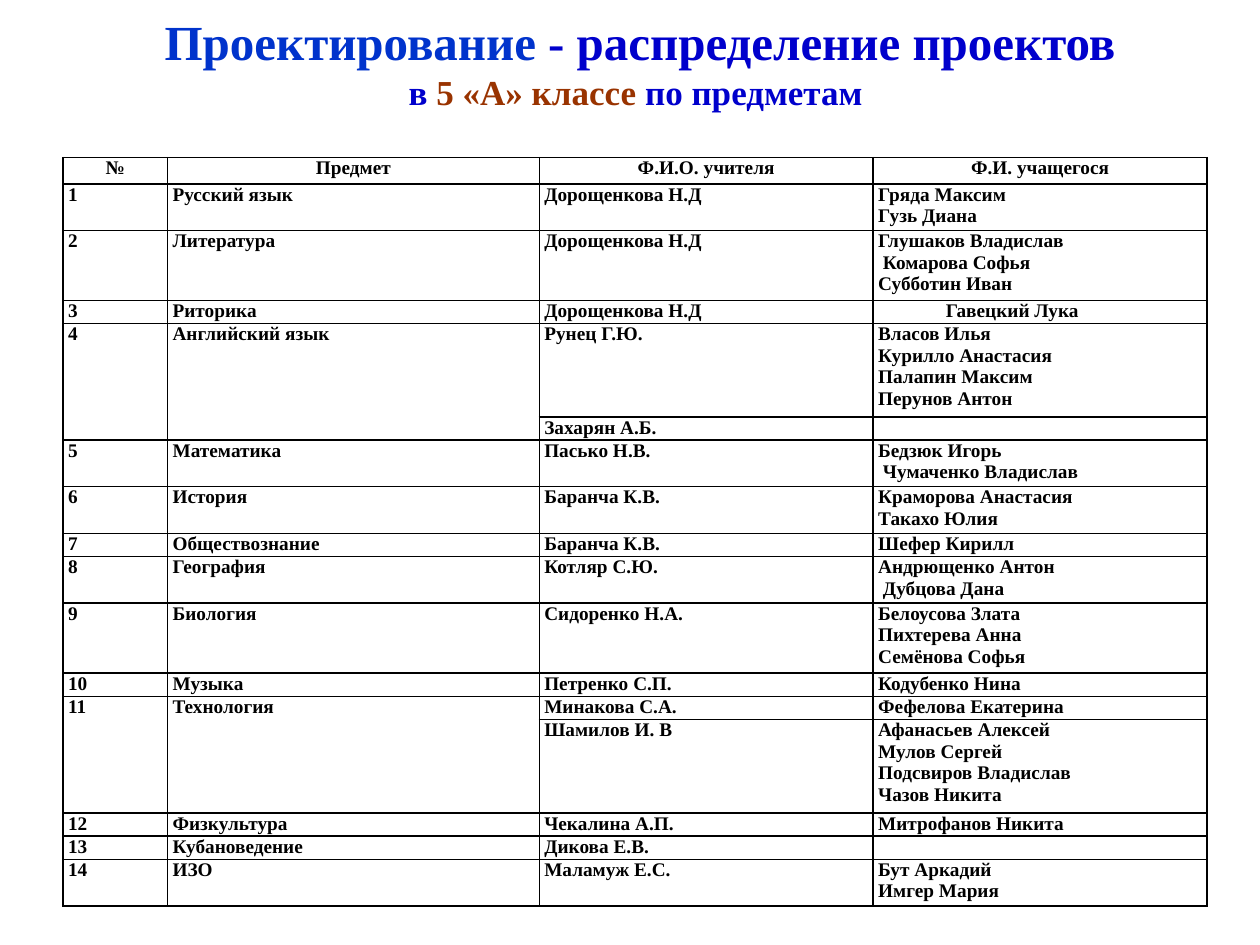
import pptx
import pptx.dml.color
import pptx.enum.text
import pptx.oxml
import pptx.oxml.ns
import pptx.util
from pptx.util import Inches

ALIGN = pptx.enum.text.PP_ALIGN
ANCHOR = pptx.enum.text.MSO_ANCHOR


def color(hex_value):
    return pptx.dml.color.RGBColor.from_string(hex_value)


def add_text(p, text, size=11, fill="000000", font="Times New Roman", bold=True):
    r = p.add_run()
    r.text = text
    r.font.size = pptx.util.Pt(size)
    r.font.name = font
    r.font.bold = bold
    r.font.color.rgb = color(fill)


class SlideBuilder:
    line_height = 0.185
    header_height = 0.21
    cell_margin = 0.04
    number_indent = 0.38
    border = "000000"

    def __init__(self, slide):
        self.s = slide

    def title(self, left, top, width, height, lines):
        sp = self.s.shapes.add_textbox(
            Inches(left), Inches(top), Inches(width), Inches(height))
        tf = sp.text_frame
        tf.word_wrap = True
        tf.vertical_anchor = ANCHOR.BOTTOM
        tf.margin_top = 0
        tf.margin_bottom = Inches(0.19)
        p = tf.paragraphs[0]
        p.alignment = ALIGN.CENTER
        for i, (size, runs) in enumerate(lines):
            if i:
                p.add_line_break()
            for text, fill in runs:
                add_text(p, text, size=size, fill=fill)

    def cell_borders(self, cell):
        tc_pr = cell._tc.get_or_add_tcPr()
        for i, side in enumerate(("lnL", "lnR", "lnT", "lnB")):
            tc_pr.insert(i, pptx.oxml.parse_xml(
                f'<a:{side} {pptx.oxml.ns.nsdecls("a")} w="12700"><a:solidFill>'
                f'<a:srgbClr val="{self.border}"/></a:solidFill></a:{side}>'))

    def cell(self, cell, text, align=ALIGN.LEFT, indent=0):
        cell.margin_left = cell.margin_right = Inches(self.cell_margin)
        cell.margin_top = cell.margin_bottom = 0
        cell.fill.background()
        self.cell_borders(cell)
        tf = cell.text_frame
        for i, line in enumerate(text.split("\n")):
            p = tf.add_paragraph() if i else tf.paragraphs[0]
            p.alignment = align
            if indent:
                p_pr = p._p.get_or_add_pPr()
                p_pr.set("marL", str(Inches(indent)))
                p_pr.set("indent", str(-Inches(indent)))
            if line:
                add_text(p, line)
            else:
                # Keeps an empty cell as low as one line of text
                p._p.get_or_add_endParaRPr().set("sz", "1100")

    def table(self, left, top, widths, header, rows):
        heights = [self.header_height] + [
            self.line_height * (row[-1].count("\n") + 1) for row in rows]
        tbl = self.s.shapes.add_table(
            len(heights), len(widths), Inches(left), Inches(top),
            Inches(sum(widths)), Inches(sum(heights))).table
        tbl.first_row = tbl.horz_banding = False
        for column, width in zip(tbl.columns, widths):
            column.width = Inches(width)
        for row, height in zip(tbl.rows, heights):
            row.height = Inches(height)
        for c, text in enumerate(header):
            self.cell(tbl.cell(0, c), text, align=ALIGN.CENTER)
        for i, row in enumerate(rows, 1):
            for c, text in enumerate(row):
                if c == 0:
                    self.cell(tbl.cell(i, c), text, align=ALIGN.JUSTIFY,
                              indent=self.number_indent)
                else:
                    self.cell(tbl.cell(i, c), text)
            # A row without a number continues the subject above
            if not row[0]:
                for c in (0, 1):
                    tbl.cell(i - 1, c).merge(tbl.cell(i, c))


HEADER = ["№", "Предмет", "Ф.И.О. учителя", "Ф.И. учащегося"]
# Subject, then its teachers with their pupils
SUBJECTS = [
    ("Русский язык", [("Дорощенкова Н.Д", "Гряда Максим\nГузь Диана")]),
    ("Литература", [("Дорощенкова Н.Д",
                     "Глушаков Владислав\n Комарова Софья\nСубботин Иван")]),
    ("Риторика", [("Дорощенкова Н.Д", "\t Гавецкий Лука")]),
    ("Английский язык", [
        ("Рунец Г.Ю.", "Власов Илья\nКурилло Анастасия\nПалапин Максим\nПерунов Антон"),
        ("Захарян А.Б.", "")]),
    ("Математика", [("Пасько Н.В.", "Бедзюк Игорь\n Чумаченко Владислав")]),
    ("История", [("Баранча К.В.", "Краморова Анастасия\nТакахо Юлия")]),
    ("Обществознание", [("Баранча К.В.", "Шефер Кирилл")]),
    ("География", [("Котляр С.Ю.", "Андрющенко Антон\n Дубцова Дана")]),
    ("Биология", [("Сидоренко Н.А.", "Белоусова Злата\nПихтерева Анна\nСемёнова Софья")]),
    ("Музыка", [("Петренко С.П.", "Кодубенко Нина")]),
    ("Технология", [
        ("Минакова С.А.", "Фефелова Екатерина"),
        ("Шамилов И. В",
         "Афанасьев Алексей\nМулов Сергей\nПодсвиров Владислав\nЧазов Никита")]),
    ("Физкультура", [("Чекалина А.П.", "Митрофанов Никита")]),
    ("Кубановедение", [("Дикова Е.В.", "")]),
    ("ИЗО", [("Маламуж Е.С.", "Бут Аркадий\nИмгер Мария")]),
]


def main():
    prs = pptx.Presentation()
    prs.slide_width, prs.slide_height = Inches(10), Inches(7.5)
    builder = SlideBuilder(prs.slides.add_slide(prs.slide_layouts[6]))

    # Title
    builder.title(0.58, 0.25, 9, 0.83, [
        (28, [("Проектирование ", "0033CC"), ("- распределение проектов", "0000CC")]),
        (20, [("в ", "0000CC"), ("5 «А» классе ", "993300"), ("по предметам ", "0000CC")]),
    ])

    # Table of projects
    rows = []
    for number, (subject, teachers) in enumerate(SUBJECTS, 1):
        for i, (teacher, pupils) in enumerate(teachers):
            lead = ["", ""] if i else [str(number), subject]
            rows.append(lead + [teacher, pupils])
    builder.table(0.5, 1.25, [0.83, 2.95, 2.65, 2.65], HEADER, rows)

    prs.save("out.pptx")


if __name__ == "__main__":
    main()
